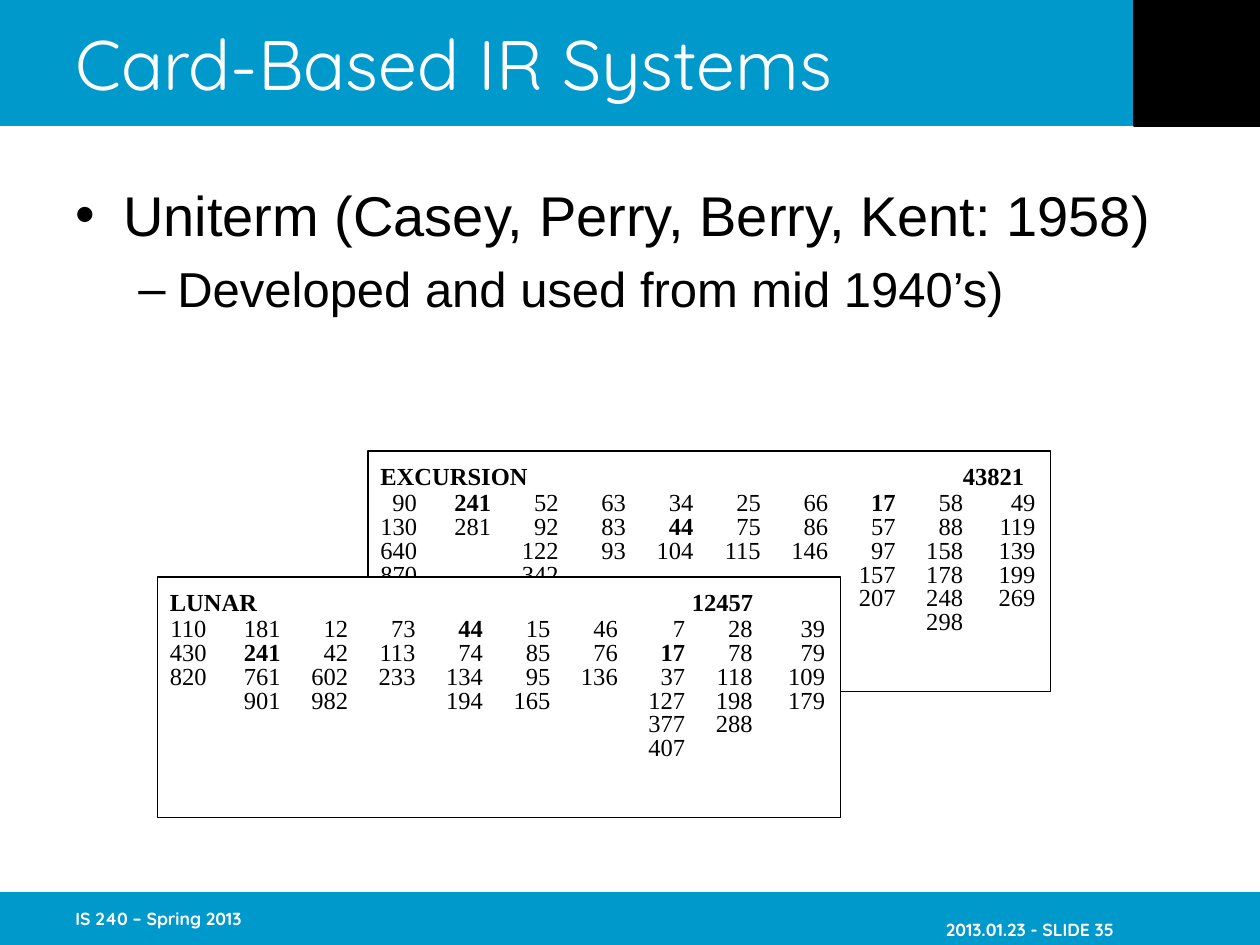
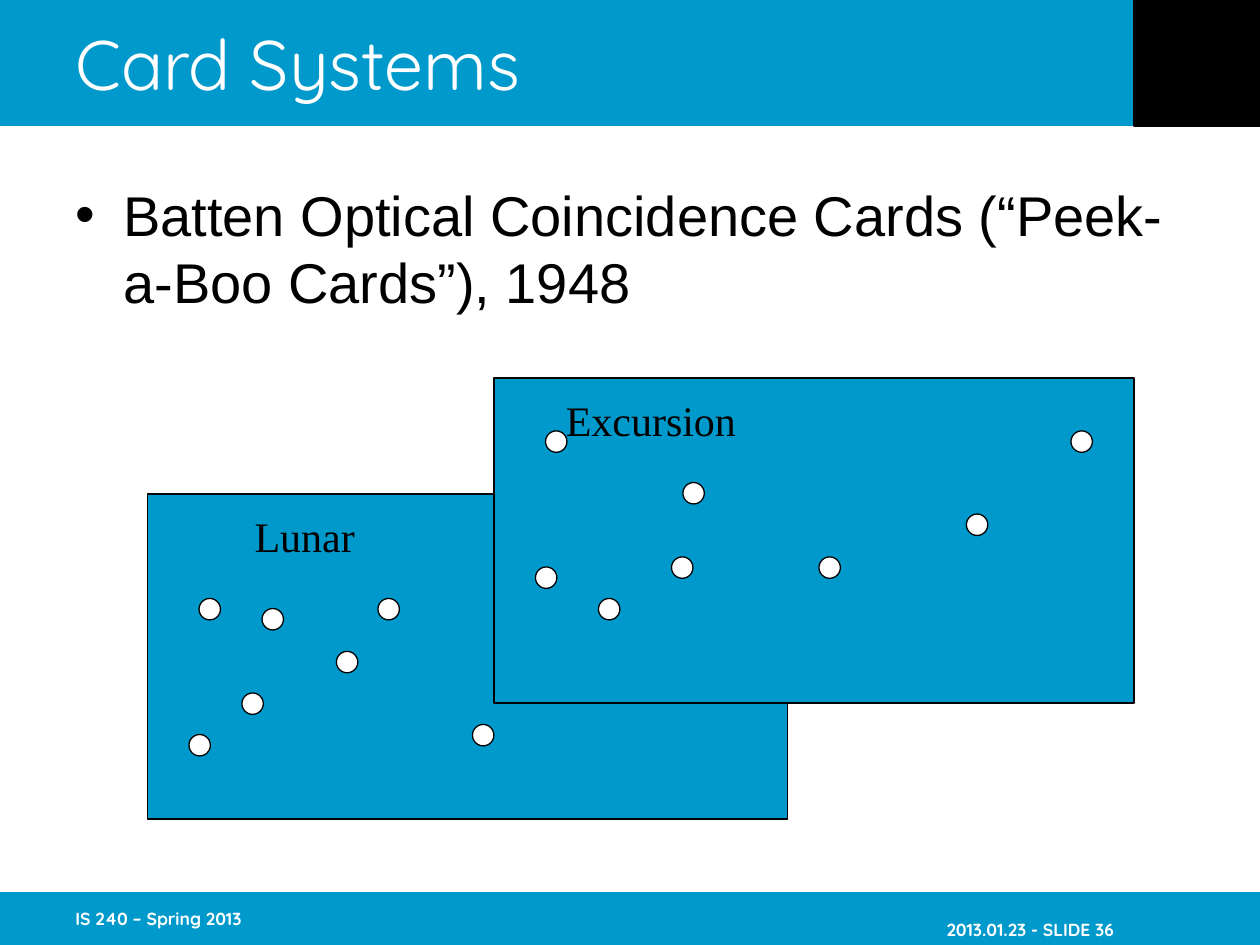
from lxml.etree import SubElement
from pptx import Presentation
from pptx.dml.color import RGBColor
from pptx.enum.shapes import MSO_SHAPE
from pptx.enum.text import MSO_ANCHOR, MSO_AUTO_SIZE, PP_ALIGN
from pptx.oxml.ns import qn
from pptx.util import Inches, Pt

COLORS = {"band": "0099CC", "ink": "000000", "paper": "FFFFFF"}
HEAD_FONT, BODY_FONT, CARD_FONT = "Quicksand", "Arial", "Times New Roman"
COLUMNS = [0.29] + [0.88 + 0.535 * i for i in range(8)] + [5.2]
SHARED_TERMS = {"241", "44", "17"}
BULLETS = [("•", 32, 0.38, 0.38), ("–", 28, 0.81, 0.31)]
DOT = 0.17

EXCURSION_ROWS = [
    "90 241 52 63 34 25 66 17 58 49",
    "130 281 92 83 44 75 86 57 88 119",
    "640 . 122 93 104 115 146 97 158 139",
    "870 . 342 . . . . 157 178 199",
    ". . . . . . . 207 248 269",
    ". . . . . . . . 298",
]
LUNAR_ROWS = [
    "110 181 12 73 44 15 46 7 28 39",
    "430 241 42 113 74 85 76 17 78 79",
    "820 761 602 233 134 95 136 37 118 109",
    ". 901 982 . 194 165 . 127 198 179",
    ". . . . . . . 377 288",
    ". . . . . . . 407",
]
LUNAR_HOLES = [(0.41, 0.83), (0.91, 0.91), (0.75, 1.58), (1.5, 1.25),
               (0.33, 1.91), (2.58, 1.83), (1.83, 0.83)]
EXCURSION_HOLES = [(0.41, 0.42), (1.41, 1.42), (0.83, 1.75), (1.5, 0.83),
                   (3.75, 1.08), (0.33, 1.5), (2.58, 1.42), (4.58, 0.42)]


def rgb(name):
    return RGBColor.from_string(COLORS[name])


def add_text(p, text, size, font=BODY_FONT, color="ink", bold=False):
    r = p.add_run()
    r.text = text
    r.font.size = Pt(size)
    r.font.name = font
    r.font.bold = bold
    r.font.color.rgb = rgb(color)


def set_frame(tf, left=0.1, top=0.05, right=0.1, bottom=0.05, anchor=MSO_ANCHOR.TOP):
    tf.word_wrap = True
    tf.auto_size = MSO_AUTO_SIZE.NONE
    tf.margin_left, tf.margin_top = Inches(left), Inches(top)
    tf.margin_right, tf.margin_bottom = Inches(right), Inches(bottom)
    tf.vertical_anchor = anchor
    return tf


def add_box(s, box, fill=None, line=None, kind=MSO_SHAPE.RECTANGLE):
    sp = s.shapes.add_shape(kind, *map(Inches, box))
    sp.shadow.inherit = False
    if fill:
        sp.fill.solid()
        sp.fill.fore_color.rgb = rgb(fill)
    else:
        sp.fill.background()
    if line:
        sp.line.color.rgb = rgb(line)
        sp.line.width = Pt(0.75)
    else:
        sp.line.fill.background()
    return sp


def add_footer(s, box, text, align):
    tf = s.shapes.add_textbox(*map(Inches, box)).text_frame
    set_frame(tf, right=0, anchor=MSO_ANCHOR.MIDDLE)
    p = tf.paragraphs[0]
    p.alignment = align
    add_text(p, text, 10, HEAD_FONT, "paper", True)


def add_body(s, box, items):
    tf = s.shapes.add_textbox(*map(Inches, box)).text_frame
    set_frame(tf, top=0.1, bottom=0)
    for i, (level, text) in enumerate(items):
        p = tf.add_paragraph() if i else tf.paragraphs[0]
        char, size, margin, hang = BULLETS[level]
        p.level = level
        if i:
            p.space_before = Pt(6.5)
        pPr = p._p.get_or_add_pPr()
        pPr.set("marL", str(Inches(margin)))
        pPr.set("indent", str(-Inches(hang)))
        SubElement(pPr, qn("a:buFont"), typeface=BODY_FONT)
        SubElement(pPr, qn("a:buChar"), char=char)
        add_text(p, text, size)


def add_slide(prs, title, number, items):
    s = prs.slides.add_slide(prs.slide_layouts[5])
    add_box(s, (0, 0, 10, 1), "band")
    add_box(s, (0, 7.08, 10, 0.42), "band")
    add_box(s, (9, 0, 1, 1), "ink", "ink")
    add_footer(s, (0.5, 7.08, 2.08, 0.42), "IS 240 – Spring 2013", PP_ALIGN.LEFT)
    add_footer(s, (6.76, 7.23, 2.08, 0.3), f"2013.01.23 - SLIDE {number}", PP_ALIGN.RIGHT)
    sp = s.shapes.title
    sp.element.getparent().append(sp.element)
    sp.left, sp.top, sp.width, sp.height = map(Inches, (0.5, 0, 8.5, 1))
    p = set_frame(sp.text_frame, anchor=MSO_ANCHOR.MIDDLE).paragraphs[0]
    p.alignment = PP_ALIGN.LEFT
    add_text(p, title, 40, HEAD_FONT, "paper")
    add_body(s, (0.5, 1.33, 9, 5.42), items)
    return s


def set_tabs(p, stops):
    tabs = SubElement(p._p.get_or_add_pPr(), qn("a:tabLst"))
    for stop in stops:
        SubElement(tabs, qn("a:tab"), pos=str(Inches(stop)), algn="r")


def add_uniterm_card(s, left, top, term, count, count_right, rows, fill=None):
    sp = add_box(s, (left, top, 5.42, 1.91), fill, "ink")
    tf = set_frame(sp.text_frame)
    p = tf.paragraphs[0]
    p.alignment = PP_ALIGN.LEFT
    p.line_spacing = Pt(18.7)
    set_tabs(p, [count_right])
    add_text(p, f"{term}\t{count}", 14, CARD_FONT, bold=True)
    for i, row in enumerate(rows):
        p = tf.add_paragraph()
        p.alignment = PP_ALIGN.LEFT
        p.line_spacing = Pt(13.7)
        p.space_before = Pt(0 if i else 1.2)
        set_tabs(p, COLUMNS)
        for value in row.split():
            text = "\t" + value.replace(".", "")
            add_text(p, text, 14, CARD_FONT, bold=value in SHARED_TERMS)


def add_peek_card(s, left, top, term, term_left, holes):
    sp = add_box(s, (left, top, 5.08, 2.58), "band", "ink")
    p = set_frame(sp.text_frame, left=term_left, top=0.13).paragraphs[0]
    p.alignment = PP_ALIGN.LEFT
    add_text(p, term, 24, CARD_FONT)
    for x, y in holes:
        add_box(s, (left + x, top + y, DOT, DOT), "paper", "ink", MSO_SHAPE.OVAL)


def main():
    prs = Presentation()
    prs.slide_width, prs.slide_height = Inches(10), Inches(7.5)

    s = add_slide(prs, "Card-Based IR Systems", 35, [
        (0, "Uniterm (Casey, Perry, Berry, Kent: 1958)"),
        (1, "Developed and used from mid 1940’s)"),
    ])
    add_uniterm_card(s, 2.92, 3.58, "EXCURSION", "43821", 5.11, EXCURSION_ROWS)
    add_uniterm_card(s, 1.25, 4.58, "LUNAR", "12457", 4.63, LUNAR_ROWS, "paper")

    s = add_slide(prs, "Card Systems", 36, [
        (0, "Batten Optical Coincidence Cards (“Peek-a-Boo Cards”), 1948"),
    ])
    add_peek_card(s, 1.17, 3.92, "Lunar", 0.85, LUNAR_HOLES)
    add_peek_card(s, 3.92, 3, "Excursion", 0.57, EXCURSION_HOLES)

    prs.save("out.pptx")


if __name__ == "__main__":
    main()
